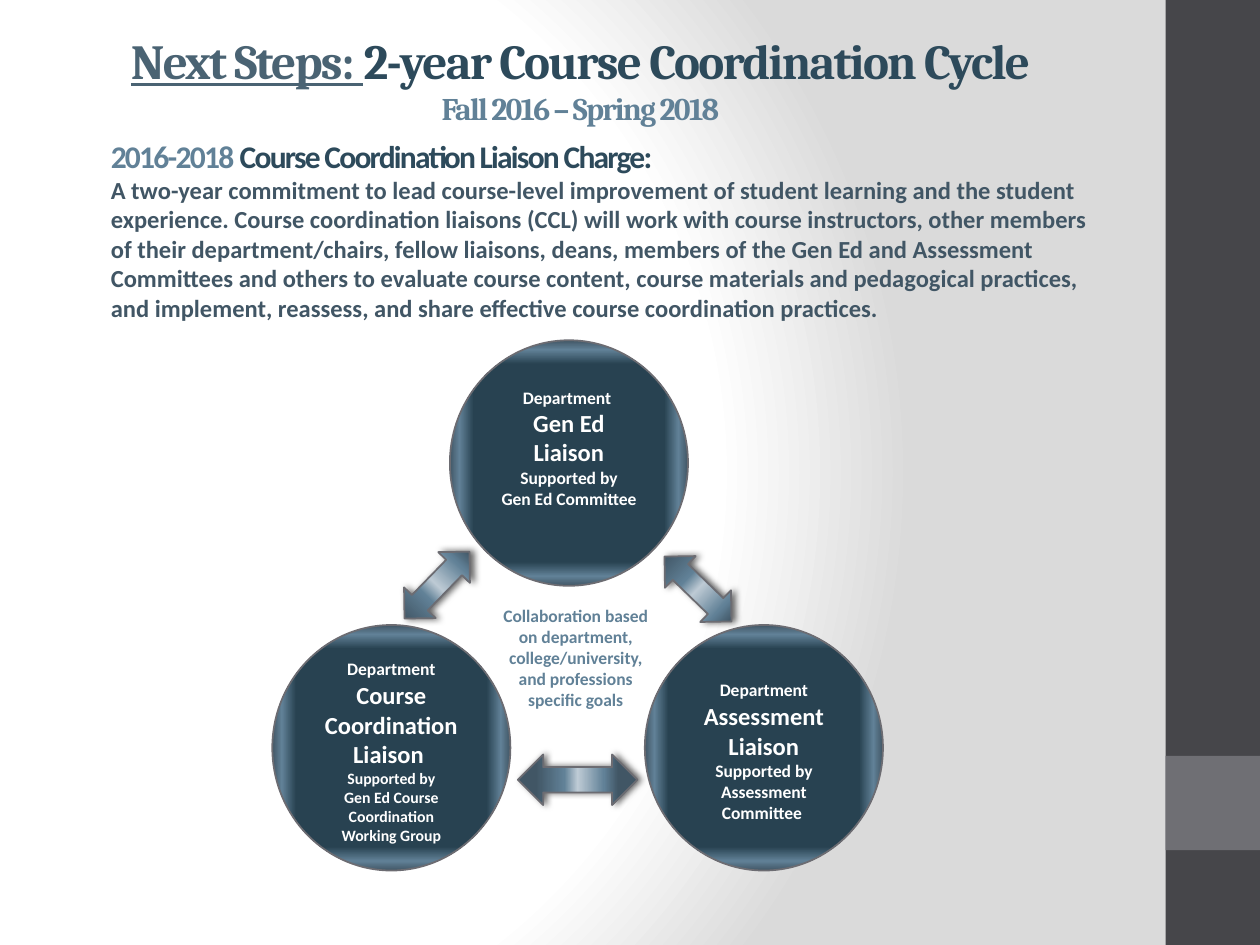
from dataclasses import dataclass
from typing import Any

from lxml import etree
from pptx import Presentation
from pptx.dml.color import RGBColor
from pptx.enum.shapes import MSO_SHAPE
from pptx.enum.text import MSO_ANCHOR, MSO_AUTO_SIZE, PP_ALIGN
from pptx.oxml.ns import qn
from pptx.util import Cm, Pt

RECTANGLE = MSO_SHAPE.RECTANGLE
CIRCLE = MSO_SHAPE.FLOWCHART_CONNECTOR
DOUBLE_ARROW = MSO_SHAPE.LEFT_RIGHT_ARROW
CENTER, LEFT = PP_ALIGN.CENTER, PP_ALIGN.LEFT
TOP, MIDDLE = MSO_ANCHOR.TOP, MSO_ANCHOR.MIDDLE

WHITE = RGBColor(0xFF, 0xFF, 0xFF)
BLACK = RGBColor(0, 0, 0)
PALE_GRAY = RGBColor(0xDA, 0xDA, 0xDA)
CHARCOAL = RGBColor(0x46, 0x46, 0x4A)
GRAY = RGBColor(0x6F, 0x6F, 0x74)
OUTLINE = RGBColor(0x6C, 0x6C, 0x72)
NAVY = RGBColor(0x28, 0x42, 0x51)
HEADING = RGBColor(0x2D, 0x4A, 0x5B)
SLATE = RGBColor(0x4A, 0x63, 0x73)
STEEL = RGBColor(0x61, 0x81, 0x97)
DUSK = RGBColor(0x41, 0x56, 0x65)
MIST = RGBColor(0xBE, 0xCB, 0xD5)

BACKDROP_STOPS = [(0, WHITE), (75, WHITE), (100, PALE_GRAY)]
CIRCLE_STOPS = [(80, NAVY), (92, STEEL), (100, DUSK)]
ARROW_STOPS = [(15, DUSK), (39, STEEL), (50, MIST), (72, STEEL), (84, DUSK)]


def add_color(parent, color):
    return etree.SubElement(parent, qn("a:srgbClr"), val=str(color))


def set_gradient(fill, holder, stops, path=None, focus=None):
    """Fill with a gradient: linear, or along a path towards focus (l, t, r, b in percent)."""
    fill.solid()
    gradient = etree.Element(qn("a:gradFill"), rotWithShape="1")
    stop_list = etree.SubElement(gradient, qn("a:gsLst"))
    for percent, color in stops:
        add_color(etree.SubElement(stop_list, qn("a:gs"), pos=str(percent * 1000)), color)
    if path:
        way = etree.SubElement(gradient, qn("a:path"))
        way.set("path", path)
        edges = {side: str(value * 1000) for side, value in zip("ltrb", focus)}
        etree.SubElement(way, qn("a:fillToRect"), edges)
    else:
        etree.SubElement(gradient, qn("a:lin"), ang="0", scaled="0")
    solid = holder.find(qn("a:solidFill"))
    holder.replace(solid, gradient)


def place(shape, left, top, width, height):
    shape.left, shape.top = Cm(left), Cm(top)
    shape.width, shape.height = Cm(width), Cm(height)


@dataclass
class SlideBuilder:
    slide: Any
    heading_font: str = "Cambria"
    text_font: str = "Calibri"

    def backdrop(self):
        fill = self.slide.background.fill
        fill.solid()
        holder = self.slide.element.find(".//" + qn("p:bgPr"))
        set_gradient(fill, holder, BACKDROP_STOPS, "circle", (20, 50, 100, 50))

    def panel(self, top, height, color):
        panel = self.slide.shapes.add_shape(RECTANGLE, Cm(23.5), Cm(top), Cm(1.9), Cm(height))
        panel.shadow.inherit = False
        panel.fill.solid()
        panel.fill.fore_color.rgb = color
        panel.line.fill.background()

    def style(self, paragraph, size, color, align=CENTER, font=None):
        paragraph.alignment = align
        paragraph.space_before = Pt(0)
        paragraph.font.name = font or self.text_font
        paragraph.font.bold = True
        if size:
            paragraph.font.size = Pt(size)
        if color is not None:
            paragraph.font.color.rgb = color

    def tight_run(self, paragraph, text, color, size=None):
        """Add a run with its letters drawn one point closer together."""
        run = paragraph.add_run()
        run.text = text
        run.font.color.rgb = color
        if size:
            run.font.size = Pt(size)
        run.font._element.set("spc", "-100")
        return run

    def title(self, lead, topic, period):
        title = self.slide.shapes.title
        place(title, 0.97, 0.36, 21.46, 3.18)
        frame = title.text_frame
        frame.auto_size = MSO_AUTO_SIZE.NONE
        frame.vertical_anchor = TOP
        frame.margin_top = Cm(0.25)
        paragraph = frame.paragraphs[0]
        self.style(paragraph, None, None, font=self.heading_font)
        self.tight_run(paragraph, lead, SLATE, 28).font.underline = True
        self.tight_run(paragraph, topic, HEADING, 28)
        paragraph.add_line_break()
        self.tight_run(paragraph, period, STEEL, 18)

    def charge(self, years, heading, text):
        body = self.slide.placeholders[1]
        place(body, 1.98, 2.64, 20.47, 4.62)
        frame = body.text_frame
        frame.auto_size = MSO_AUTO_SIZE.NONE
        intro, details = frame.paragraphs[0], frame.add_paragraph()
        self.style(intro, 18, None, LEFT)
        self.tight_run(intro, years, STEEL)
        self.tight_run(intro, heading, HEADING)
        details.text = text
        self.style(details, 14, DUSK, LEFT)
        for paragraph in (intro, details):
            properties = paragraph._p.get_or_add_pPr()
            properties.set("marL", "0")
            properties.set("indent", "0")
            bullet_off = etree.Element(qn("a:buNone"))
            properties.find(qn("a:defRPr")).addprevious(bullet_off)

    def gradient_shape(self, kind, box, stops, path=None, focus=None):
        shape = self.slide.shapes.add_shape(kind, *map(Cm, box))
        shape.shadow.inherit = False
        set_gradient(shape.fill, shape._element.spPr, stops, path, focus)
        shape.line.color.rgb = OUTLINE
        shape.line.width = Pt(1)
        return shape

    def liaison(self, left, top, paragraphs, bottom_margin=0.13):
        """Draw a circle; each paragraph is a list of (text, size) runs."""
        circle = self.gradient_shape(CIRCLE, (left, top, 4.8, 4.95), CIRCLE_STOPS,
                                     "shape", (50, 50, 50, 50))
        frame = circle.text_frame
        frame.word_wrap = True
        frame.vertical_anchor = MIDDLE
        frame.margin_bottom = Cm(bottom_margin)
        for index, runs in enumerate(paragraphs):
            paragraph = frame.add_paragraph() if index else frame.paragraphs[0]
            self.style(paragraph, runs[0][1] if len(runs) == 1 else None, WHITE)
            for text, size in runs:
                run = paragraph.add_run()
                run.text = text
                if len(runs) > 1:
                    run.font.size = Pt(size)

    def caption(self, text, box):
        caption = self.slide.shapes.add_textbox(*map(Cm, box))
        caption.text_frame.word_wrap = True
        paragraph = caption.text_frame.paragraphs[0]
        paragraph.text = text
        self.style(paragraph, 10, STEEL)

    def exchange_arrow(self, box, rotation=0):
        arrow = self.gradient_shape(DOUBLE_ARROW, box, ARROW_STOPS)
        arrow.rotation = rotation
        effects = arrow._element.spPr.find(qn("a:effectLst"))
        shadow = etree.SubElement(effects, qn("a:outerShdw"), blurRad=str(Pt(4)),
                                  dist=str(Pt(2)), dir="0", rotWithShape="0")
        etree.SubElement(add_color(shadow, BLACK), qn("a:alpha"), val="60000")


def main():
    deck = Presentation()
    deck.slide_width, deck.slide_height = Cm(25.4), Cm(19.05)
    builder = SlideBuilder(deck.slides.add_slide(deck.slide_layouts[1]))

    builder.backdrop()
    builder.panel(0, 19.05, CHARCOAL)
    builder.panel(15.24, 1.9, GRAY)
    builder.title("Next Steps: ", "2-year Course Coordination Cycle", "Fall 2016 – Spring 2018")
    builder.charge(
        "2016-2018 ", "Course Coordination Liaison Charge:",
        "A two-year commitment to lead course-level improvement of student learning and the "
        "student experience. Course coordination liaisons (CCL) will work with course "
        "instructors, other members of their department/chairs, fellow liaisons, deans, members "
        "of the Gen Ed and Assessment Committees and others to evaluate course content, course "
        "materials and pedagogical practices, and implement, reassess, and share effective "
        "course coordination practices.")

    builder.liaison(9.07, 6.86, [[("Department ", 10)], [("Gen Ed Liaison", 14)],
                                 [("Supported by", 10)], [("Gen Ed Committee", 10)]], 0.73)
    builder.liaison(5.49, 12.6, [[("Department", 10), (" Course Coordination Liaison ", 14)],
                                 [("Supported by", 9)],
                                 [("Gen Ed Course Coordination Working Group", 9)]])
    builder.liaison(13, 12.6, [[("Department", 10), (" Assessment Liaison", 14)],
                               [("Supported by Assessment Committee ", 10)]])
    builder.caption("Collaboration based on department, college/university, "
                    "and professions specific goals", (9.8, 12.07, 3.61, 2.39))

    builder.exchange_arrow((7.87, 11.35, 1.88, 0.89), 314.2)
    builder.exchange_arrow((13.13, 11.43, 1.88, 0.89), 44.1)
    builder.exchange_arrow((10.44, 15.21, 2.41, 1.02))
    deck.save("out.pptx")


if __name__ == "__main__":
    main()
